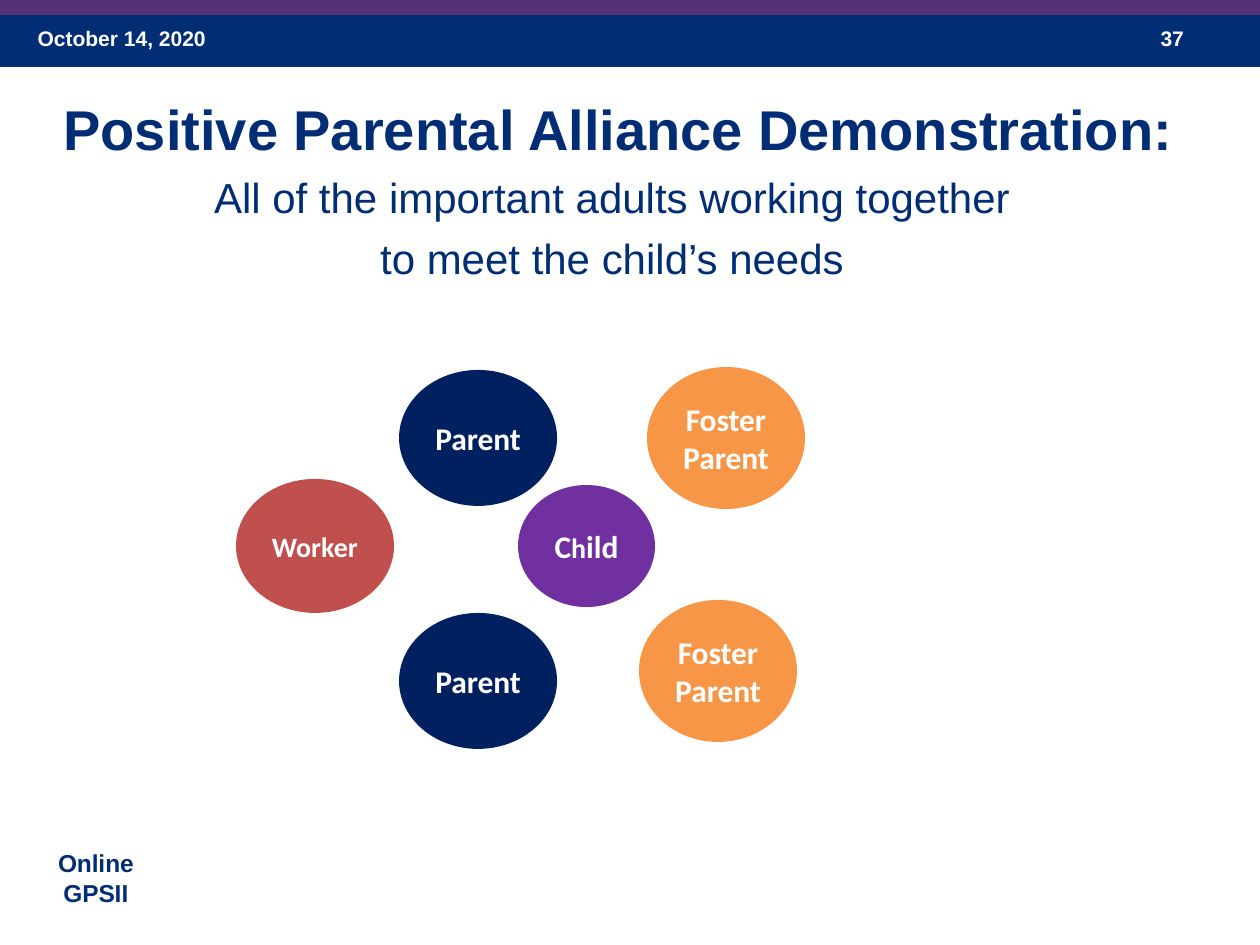
from lxml.etree import SubElement
from pptx import Presentation
from pptx.dml.color import RGBColor as Rgb
from pptx.enum.shapes import MSO_SHAPE as Shape
from pptx.enum.text import MSO_ANCHOR as Anchor, MSO_AUTO_SIZE as Fit, PP_ALIGN as Align
from pptx.oxml.ns import qn
from pptx.util import Pt

SCALE = 914400 / 168
COLORS = {
    "navy": "002D73",
    "plum": "553278",
    "parent": "002060",
    "child": "7030A0",
    "worker": "C0504D",
    "foster": "F79646",
    "white": "FFFFFF",
}


def emu(*px):
    return [round(n * SCALE) for n in px]


class Deck:
    def __init__(self, wide, high):
        self.file = Presentation()
        self.file.slide_width, self.file.slide_height = emu(wide, high)
        self.slide = self.file.slides.add_slide(self.file.slide_layouts[1])
        title = self.slide.shapes.title
        title.element.getparent().remove(title.element)

    def style(self, para, size, color, bold=True, face="Arial", align=Align.CENTER):
        para.alignment = align
        font = para.font
        font.name, font.size, font.bold = face, Pt(size), bold
        font.color.rgb = Rgb.from_string(COLORS[color])

    def shape(self, kind, box, color):
        item = self.slide.shapes.add_shape(kind, *emu(*box))
        item.shadow.inherit = False
        item.fill.solid()
        item.fill.fore_color.rgb = Rgb.from_string(COLORS[color])
        item.line.fill.background()
        return item

    def text(self, box, lines, size, color, align=Align.LEFT):
        frame = self.slide.shapes.add_textbox(*emu(*box)).text_frame
        frame.word_wrap = True
        frame.text = "\n".join(lines)
        for para in frame.paragraphs:
            self.style(para, size, color, align=align)

    def body(self, box, lines):
        item = self.slide.placeholders[1]
        item.left, item.top, item.width, item.height = emu(*box)
        frame = item.text_frame
        frame.auto_size = Fit.NONE
        frame.vertical_anchor = Anchor.TOP
        frame.margin_top = emu(13)[0]
        frame.text = "\n".join(line for line, _, _ in lines)
        for index, (para, (_, size, bold)) in enumerate(zip(frame.paragraphs, lines)):
            para.space_before = Pt(4.5 if index else 0)
            props = para._p.get_or_add_pPr()
            props.set("marL", "0")
            props.set("indent", "0")
            SubElement(props, qn("a:buNone"))
            self.style(para, size, "navy", bold)

    def node(self, box, color, lines, size=13.5):
        frame = self.shape(Shape.FLOWCHART_CONNECTOR, box, color).text_frame
        frame.word_wrap = False
        frame.vertical_anchor = Anchor.MIDDLE
        frame.margin_left, frame.margin_top = emu(12, 7)
        frame.margin_right, frame.margin_bottom = emu(12, 7)
        for index, parts in enumerate(lines):
            para = frame.add_paragraph() if index else frame.paragraphs[0]
            for part, own in parts:
                run = para.add_run()
                run.text = part
                if own:
                    run.font.size = Pt(own)
            self.style(para, size, "white", face="Calibri")


def main():
    deck = Deck(1260, 945)
    deck.shape(Shape.RECTANGLE, (0, 12, 1260, 55), "navy")
    deck.shape(Shape.RECTANGLE, (0, 0, 1260, 15), "plum")
    deck.text((21, 17, 294, 50), ["October 14, 2020"], 9, "white")
    deck.text((1144, 17, 94, 50), ["37"], 9, "white")
    deck.text((37, 840, 118, 67), ["Online", "GPSII"], 10.5, "navy", Align.CENTER)
    deck.body((20, 81, 1196, 195), [
        ("Positive Parental Alliance Demonstration:", 24, True),
        ("All of the important adults working together ", 18, False),
        ("to meet the child’s needs ", 18, False),
    ])

    for top in (370, 613):
        deck.node((399, top, 158, 136), "parent", [[("Parent", None)]])
    deck.node((518, 485, 137, 122), "child", [[("C", None), ("h", 12), ("ild", None)]])
    deck.node((236, 479, 158, 134), "worker", [[("Worker", None)]], 12)
    for left, top in ((647, 367), (639, 600)):
        deck.node((left, top, 158, 142), "foster", [[("Foster", None)], [("Parent", None)]])

    deck.file.save("out.pptx")


if __name__ == "__main__":
    main()
